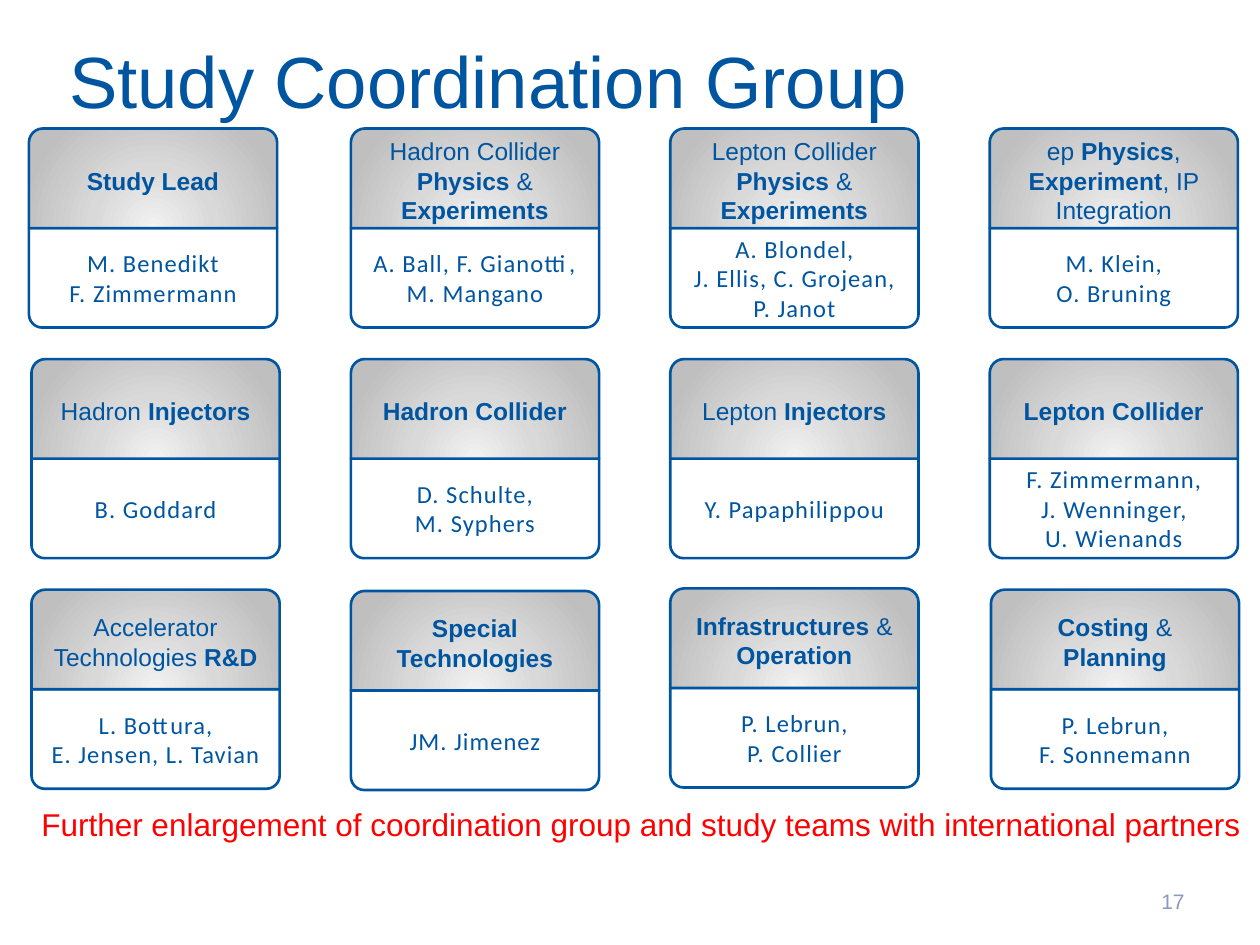
"""Build the Study Coordination Group slide: a grid of cards with topics and names."""
from dataclasses import dataclass

from lxml.etree import SubElement
from pptx import Presentation
from pptx.dml.color import RGBColor
from pptx.enum.shapes import MSO_SHAPE as SHAPE
from pptx.enum.text import MSO_ANCHOR as ANCHOR, MSO_AUTO_SIZE as AUTO, PP_ALIGN as ALIGN
from pptx.oxml.ns import qn
from pptx.util import Inches, Pt

BLUE, RED, WHITE, PALE = "0055A0", "FF0000", "FFFFFF", "8C99BE"
LEFT, TOP, STEP_X, STEP_Y = 0.25, 1.02, 2.535, 1.83
CARD_W, HALF_H = 1.97, 0.79
STOPS = [(0, "F2F2F2"), (46, "D9D9D9"), (100, "BFBFBF")]


@dataclass
class Card:
    """A card whose topic marks bold text with asterisks; dx and dy nudge it off the grid."""
    col: int
    row: int
    topic: str
    names: str
    dx: float = 0
    dy: float = 0


CARDS = [
    Card(0, 0, "*Study Lead*", "M. Benedikt\nF. Zimmermann", dx=-0.02),
    Card(1, 0, "Hadron Collider\n*Physics* & *Experiments*", "A. Ball, F. Gianotti, M. Mangano"),
    Card(2, 0, "Lepton Collider\n*Physics* & *Experiments*",
         "A. Blondel,\nJ. Ellis, C. Grojean,\nP. Janot"),
    Card(3, 0, "ep *Physics*, *Experiment*, IP Integration", "M. Klein,\nO. Bruning"),
    Card(0, 1, "Hadron *Injectors*", "B. Goddard"),
    Card(1, 1, "*Hadron Collider*", "D. Schulte,\nM. Syphers"),
    Card(2, 1, "Lepton *Injectors*", "Y. Papaphilippou"),
    Card(3, 1, "*Lepton Collider*", "F. Zimmermann,\nJ. Wenninger,\nU. Wienands"),
    Card(0, 2, "Accelerator Technologies *R&D*", "L. Bottura,\nE. Jensen, L. Tavian"),
    Card(1, 2, "*Special*\n*Technologies*", "JM. Jimenez", dy=0.01),
    Card(2, 2, "*Infrastructures* & *Operation*", "P. Lebrun,\nP. Collier", dy=-0.01),
    Card(3, 2, "*Costing* &\n*Planning*", "P. Lebrun,\nF. Sonnemann", dx=0.01),
]


def rgb(color: str) -> RGBColor:
    return RGBColor.from_string(color)


def style(r, size: float, color: str, name: str = "Arial", bold: bool = False) -> None:
    r.font.size, r.font.name, r.font.bold = Pt(size), name, bold
    r.font.color.rgb = rgb(color)


def add_text(s, box: tuple, text: str, size: float, color: str, name: str = "Arial",
             align=ALIGN.LEFT, anchor=ANCHOR.MIDDLE, wrap: bool = True):
    tf = s.shapes.add_textbox(*map(Inches, box)).text_frame
    tf.text, tf.word_wrap, tf.vertical_anchor = text, wrap, anchor
    for p in tf.paragraphs:
        p.alignment = align
        for r in p.runs:
            style(r, size, color, name)
    return tf


def add_half(s, x: float, y: float, radius: float):
    sp = s.shapes.add_shape(SHAPE.ROUND_2_SAME_RECTANGLE, *map(Inches, (x, y, CARD_W, HALF_H)))
    sp.shadow.inherit = False
    sp.adjustments[0], sp.adjustments[1] = radius, 0
    sp.fill.solid()
    sp.fill.fore_color.rgb = rgb(WHITE)
    sp.line.color.rgb, sp.line.width = rgb(BLUE), Pt(1.5)
    return sp


def set_radial_fill(sp) -> None:
    spPr = sp._element.spPr
    solid = spPr.find(qn("a:solidFill"))
    grad = solid.makeelement(qn("a:gradFill"), {"rotWithShape": "1"})
    spPr.replace(solid, grad)
    stops = SubElement(grad, qn("a:gsLst"))
    for pos, color in STOPS:
        gs = SubElement(stops, qn("a:gs"), pos=str(pos * 1000))
        SubElement(gs, qn("a:srgbClr"), val=color)
    circle = SubElement(grad, qn("a:path"), path="circle")
    SubElement(circle, qn("a:fillToRect"), l="50000", t="130000", r="50000", b="-30000")


def add_card(s, card: Card) -> None:
    x = LEFT + card.col * STEP_X + card.dx
    y = TOP + card.row * STEP_Y + card.dy
    lower = add_half(s, x, y + HALF_H, 0.134)
    lower._element.spPr.xfrm.set("flipV", "1")
    tf = add_text(s, (x, y + HALF_H + 0.01, CARD_W, 0.77), card.names, 14, BLUE,
                  "Calibri", ALIGN.CENTER)
    for p in tf.paragraphs:
        for r in p.runs:
            r.font._element.set("spc", "60")

    upper = add_half(s, x, y, 0.14)
    set_radial_fill(upper)
    tf = upper.text_frame
    tf.text, tf.word_wrap, tf.vertical_anchor = card.topic, True, ANCHOR.MIDDLE
    for p in tf.paragraphs:
        parts = p.text.split("*")
        p.text, p.alignment = "", ALIGN.CENTER
        for i, part in enumerate(parts):
            if part:
                r = p.add_run()
                r.text = part
                style(r, 14, BLUE, bold=i % 2 == 1)


def add_title(s, text: str) -> None:
    sp = s.shapes.title
    sp.left, sp.top, sp.width, sp.height = map(Inches, (0.5, 0.26, 9, 0.74))
    tf = sp.text_frame
    tf.text, tf.auto_size, tf.vertical_anchor = text, AUTO.NONE, ANCHOR.MIDDLE
    tf.margin_left = tf.margin_right = tf.margin_top = tf.margin_bottom = Inches(0.05)
    p = tf.paragraphs[0]
    p.alignment = ALIGN.LEFT
    style(p.runs[0], 41.4, BLUE)


def main() -> None:
    prs = Presentation()
    prs.slide_width, prs.slide_height = Inches(10), Inches(7.5)
    s = prs.slides.add_slide(prs.slide_layouts[5])
    add_title(s, "Study Coordination Group")
    for card in CARDS:
        add_card(s, card)
    add_text(s, (0.23, 6.34, 9.88, 0.4),
             "Further enlargement of coordination group and study teams with international partners",
             18, RED, anchor=ANCHOR.TOP, wrap=False)
    add_text(s, (8.95, 6.95, 0.55, 0.4), "17", 12, PALE, align=ALIGN.RIGHT)
    prs.save("out.pptx")


if __name__ == "__main__":
    main()
